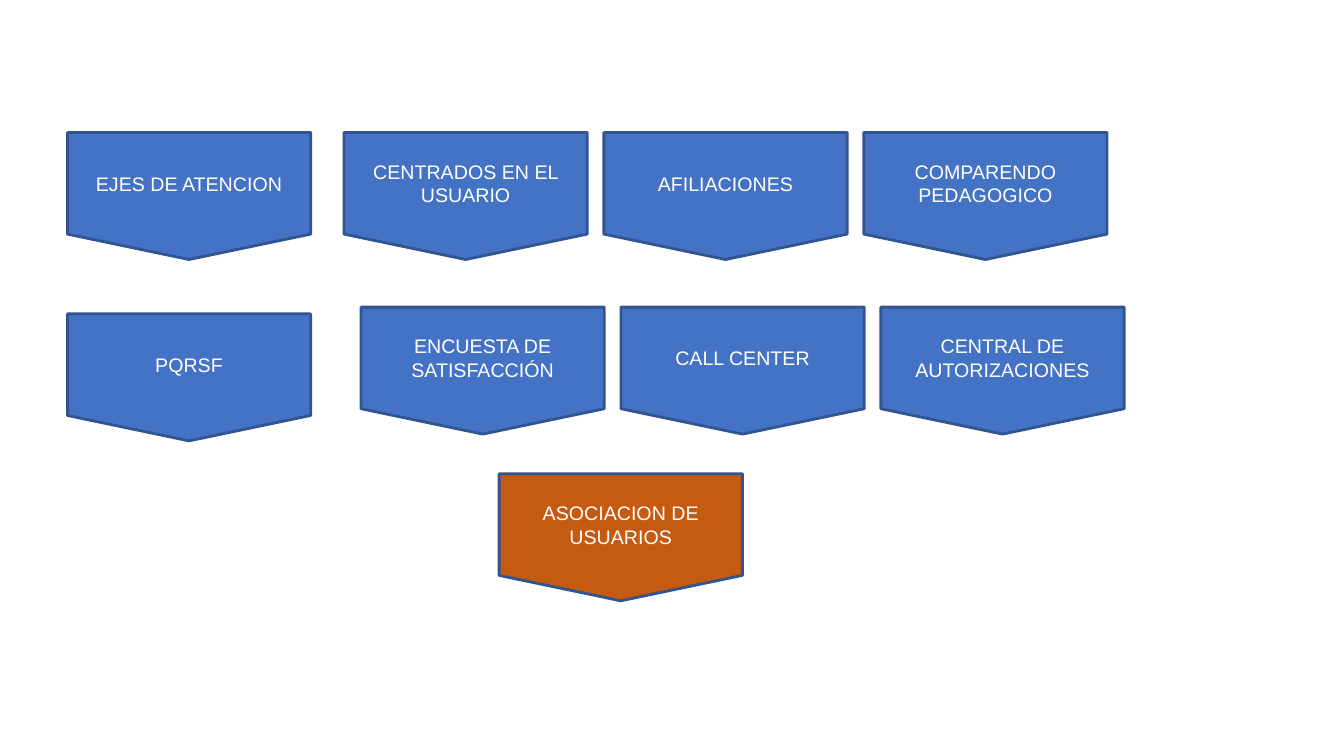
"""Build the slide of user service areas as rows of pentagon boxes."""
from pptx import Presentation
from pptx.dml.color import RGBColor
from pptx.enum.shapes import MSO_SHAPE
from pptx.enum.text import MSO_ANCHOR, PP_ALIGN
from pptx.util import Cm, Pt

COLORS = {"blue": "4472C4", "orange": "C55A11", "outline": "325491", "text": "FFFFFF"}
BOX_WIDTH, BOX_HEIGHT, COLUMN_STEP = 6.13, 3.2, 6.55

ROWS = [
    (1.7, 3.34, "blue", ["EJES DE ATENCION"]),
    (8.67, 3.34, "blue", ["CENTRADOS EN EL USUARIO", "AFILIACIONES", "COMPARENDO PEDAGOGICO"]),
    (1.7, 7.91, "blue", ["PQRSF"]),
    (9.1, 7.74, "blue", ["ENCUESTA DE SATISFACCIÓN", "CALL CENTER", "CENTRAL DE AUTORIZACIONES"]),
    (12.58, 11.94, "orange", ["ASOCIACION DE USUARIOS"]),
]

deck = Presentation()
deck.slide_width, deck.slide_height = Cm(33.87), Cm(19.05)
page = deck.slides.add_slide(deck.slide_layouts[6])

for left, top, color, labels in ROWS:
    for column, label in enumerate(labels):
        box = page.shapes.add_shape(
            MSO_SHAPE.FLOWCHART_OFFPAGE_CONNECTOR,
            Cm(left + column * COLUMN_STEP), Cm(top), Cm(BOX_WIDTH), Cm(BOX_HEIGHT),
        )
        box.shadow.inherit = False
        box.fill.solid()
        box.fill.fore_color.rgb = RGBColor.from_string(COLORS[color])
        box.line.color.rgb = RGBColor.from_string(COLORS["outline"])
        box.line.width = Pt(2)
        box.text_frame.word_wrap = True
        box.text_frame.vertical_anchor = MSO_ANCHOR.MIDDLE
        para = box.text_frame.paragraphs[0]
        para.alignment = PP_ALIGN.CENTER
        span = para.add_run()
        span.text = label
        span.font.name = "Arial"
        span.font.size = Pt(14)
        span.font.color.rgb = RGBColor.from_string(COLORS["text"])

deck.save("out.pptx")
